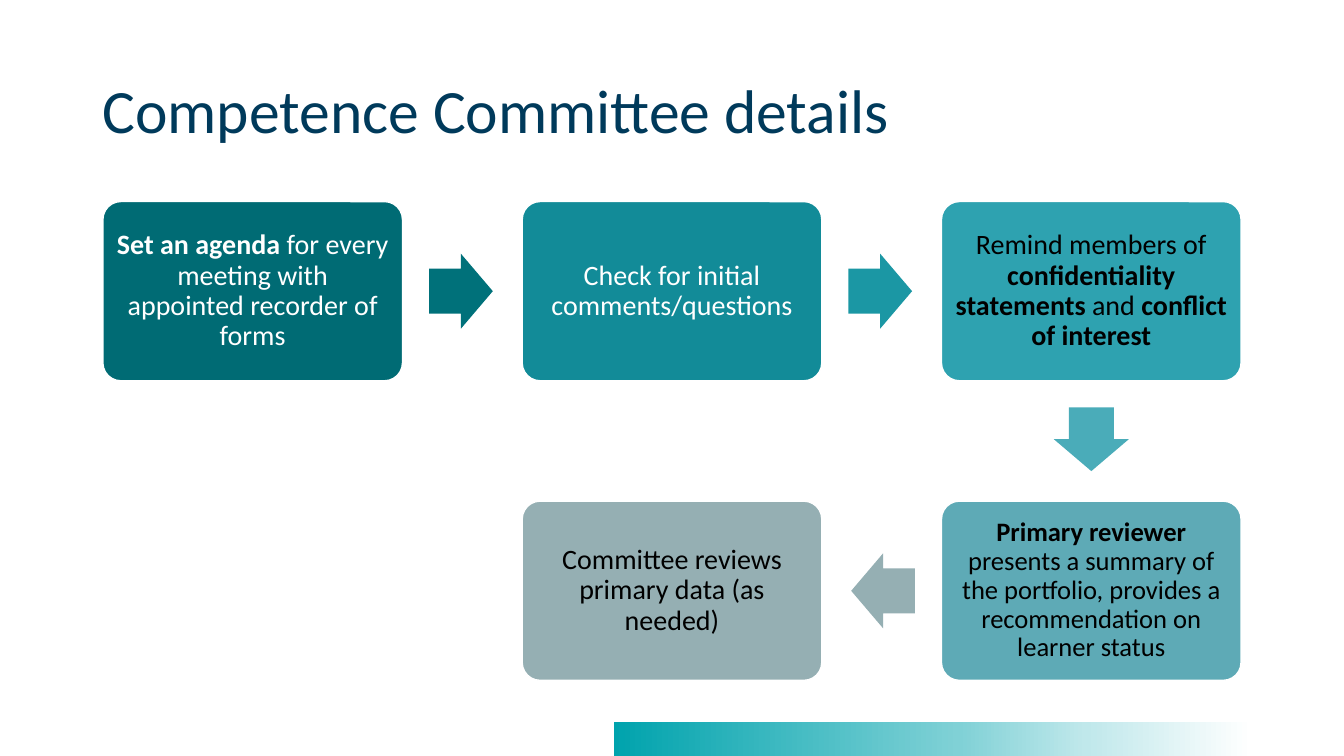
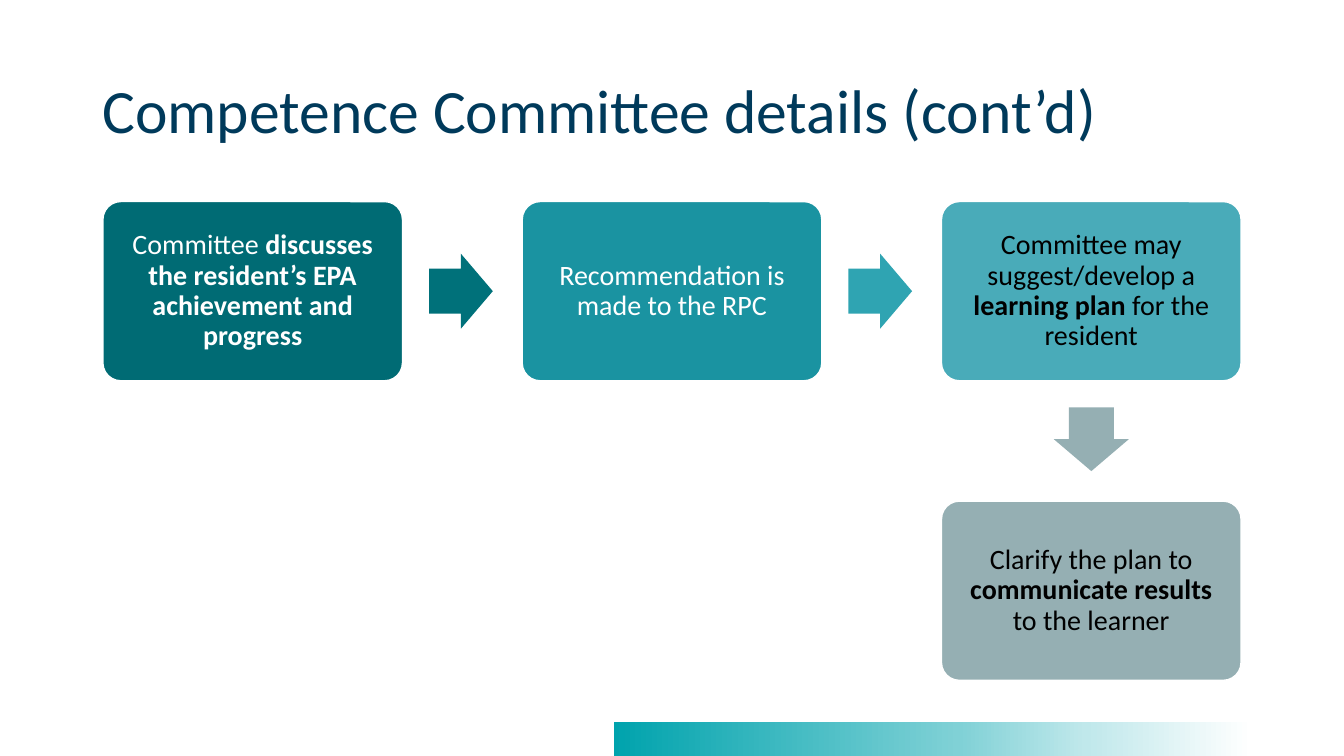
import math
from dataclasses import dataclass

from lxml import etree
from pptx import Presentation
from pptx.dml.color import RGBColor
from pptx.enum.shapes import MSO_SHAPE
from pptx.enum.text import MSO_ANCHOR, MSO_AUTO_SIZE, PP_ALIGN
from pptx.oxml.ns import qn
from pptx.util import Pt

BOX = MSO_SHAPE.ROUNDED_RECTANGLE
ARROW = MSO_SHAPE.RIGHT_ARROW
RECT = MSO_SHAPE.RECTANGLE
MIDDLE = MSO_ANCHOR.MIDDLE
LEFT, CENTER = PP_ALIGN.LEFT, PP_ALIGN.CENTER
NO_FIT = MSO_AUTO_SIZE.NONE

FONT = "Calibri"
NAVY, WHITE, BLACK = "003A5B", "FFFFFF", "000000"
DEEP, GREY = "006B74", "95AFB3"
FADE = ((0, "00A3AD"), (54, "80D1D6"), (74, "C0E8EB"), (100, WHITE))

# Grid of boxes, in points
X0, Y0 = 73.5, 144
DX, DY = 299.5, 214
BOX_W, BOX_H = 214, 128
GAP, ARROW_W, ARROW_H = 19, 45.5, 53.5
INSET = 6


@dataclass(frozen=True)
class Run:
    text: str
    bold: bool = False


@dataclass(frozen=True)
class Step:
    """A box at a grid cell; arrow colours the arrow to the next step."""
    col: int
    row: int
    fill: str
    ink: str
    runs: tuple[Run, ...]
    arrow: str = ""
    size: int = 20


@dataclass(frozen=True)
class Page:
    title: str
    steps: tuple[Step, ...]


PAGES = (
    Page("Competence Committee details", (
        Step(0, 0, DEEP, WHITE, (
            Run("Set an agenda", True),
            Run(" for every meeting with appointed recorder of forms")), "00717A"),
        Step(1, 0, "128B98", WHITE, (
            Run("Check for initial comments/questions"),), "1B97A4"),
        Step(2, 0, "2EA2B0", BLACK, (
            Run("Remind members of "), Run("confidentiality statements", True),
            Run(" and "), Run("conflict of interest", True)), "4AACB9"),
        Step(2, 1, "5EAAB6", BLACK, (
            Run("Primary reviewer", True),
            Run(" presents a summary of the portfolio, provides a "
                "recommendation on learner status")), GREY, 19),
        Step(1, 1, GREY, BLACK, (
            Run("Committee reviews primary data (as needed)"),)),
    )),
    Page("Competence Committee details (cont’d)", (
        Step(0, 0, DEEP, WHITE, (
            Run("Committee "),
            Run("discusses the resident’s EPA achievement and progress", True)),
            "00717A"),
        Step(1, 0, "1A93A1", WHITE, (
            Run("Recommendation is made to the RPC"),), "2FA4B2"),
        Step(2, 0, "49ABB9", BLACK, (
            Run("Committee may suggest/develop a "), Run("learning plan", True),
            Run(" for the resident")), GREY),
        Step(2, 1, GREY, BLACK, (
            Run("Clarify the plan to "), Run("communicate results", True),
            Run(" to the learner"))),
    )),
)


def rgb(code: str) -> RGBColor:
    return RGBColor.from_string(code)


def add_shape(slide, kind, x: float, y: float, w: float, h: float, fill: str = ""):
    shape = slide.shapes.add_shape(kind, Pt(x), Pt(y), Pt(w), Pt(h))
    shape.shadow.inherit = False
    shape.line.fill.background()
    if fill:
        shape.fill.solid()
        shape.fill.fore_color.rgb = rgb(fill)
    return shape


def write(frame, runs: tuple[Run, ...], size: int, ink: str, align) -> None:
    frame.word_wrap = True
    frame.auto_size = NO_FIT
    frame.vertical_anchor = MIDDLE
    para = frame.paragraphs[0]
    para.alignment = align
    para.line_spacing = 0.9
    for part in runs:
        run = para.add_run()
        run.text = part.text
        font = run.font
        font.name, font.size, font.bold = FONT, Pt(size), part.bold
        font.color.rgb = rgb(ink)


def add_title(slide, text: str) -> None:
    title = slide.shapes.title
    title.left, title.top = Pt(66), Pt(29)
    title.width, title.height = Pt(828), Pt(104)
    write(title.text_frame, (Run(text),), 44, NAVY, LEFT)


def add_band(slide, layout) -> None:
    """Draw the fading band and move it to the layout, which all slides share."""
    band = add_shape(slide, RECT, 438.5, 516, 456, 24)
    band.fill.gradient()
    band.fill.gradient_angle = 0
    stops = band.element.spPr.find(qn("a:gradFill")).find(qn("a:gsLst"))
    for old in list(stops):
        stops.remove(old)
    for pos, code in FADE:
        stop = etree.SubElement(stops, qn("a:gs"), pos=str(pos * 1000))
        etree.SubElement(stop, qn("a:srgbClr"), val=code)
    layout.shapes.element.insert(2, band.element)


def add_box(slide, step: Step) -> None:
    box = add_shape(slide, BOX, X0 + step.col * DX, Y0 + step.row * DY,
                    BOX_W, BOX_H, step.fill)
    box.adjustments[0] = 0.1
    box.line.color.rgb = rgb(WHITE)
    box.line.width = Pt(1)
    frame = box.text_frame
    frame.margin_left = frame.margin_right = Pt(INSET)
    frame.margin_top = frame.margin_bottom = Pt(INSET)
    write(frame, step.runs, step.size, step.ink, CENTER)


def add_arrow(slide, step: Step, goal: Step) -> None:
    """Draw an arrow that starts one gap outside the step's box."""
    dx, dy = goal.col - step.col, goal.row - step.row
    reach = GAP + ARROW_W / 2
    mid_x = X0 + step.col * DX + BOX_W / 2 + dx * (BOX_W / 2 + reach)
    mid_y = Y0 + step.row * DY + BOX_H / 2 + dy * (BOX_H / 2 + reach)
    arrow = add_shape(slide, ARROW, mid_x - ARROW_W / 2, mid_y - ARROW_H / 2,
                      ARROW_W, ARROW_H, step.arrow)
    arrow.adjustments[0], arrow.adjustments[1] = 0.6, 0.5
    arrow.rotation = math.degrees(math.atan2(dy, dx))


def main() -> None:
    deck = Presentation()
    deck.slide_width, deck.slide_height = Pt(960), Pt(540)
    layout = deck.slide_layouts.get_by_name("Title Only")
    for num, page in enumerate(PAGES):
        slide = deck.slides.add_slide(layout)
        if num == 0:
            add_band(slide, layout)
        add_title(slide, page.title)
        for step in page.steps:
            add_box(slide, step)
        for step, goal in zip(page.steps, page.steps[1:]):
            add_arrow(slide, step, goal)
    deck.save("out.pptx")


if __name__ == "__main__":
    main()
